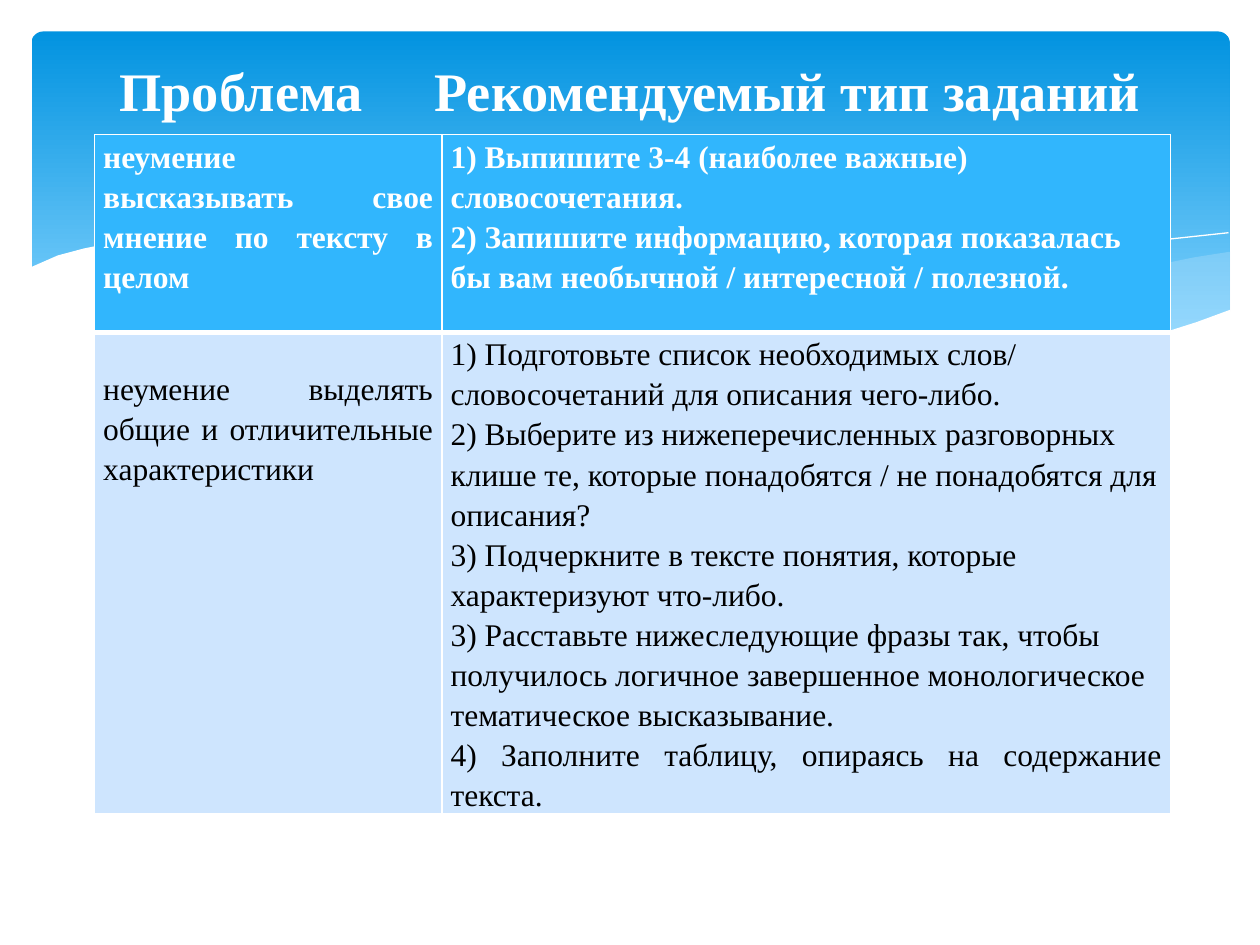
from dataclasses import dataclass
from typing import Optional

from lxml import etree
from pptx import Presentation
from pptx.dml import color as dml
from pptx.enum import shapes, text
from pptx.oxml import ns
from pptx.util import Pt

FONT = "Times New Roman"
WHITE = "FFFFFF"
GLOW = "C6E7FC"


@dataclass
class Wave:
    points: list[tuple[float, float]]
    fill: Optional[str] = None
    alpha: int = 100
    line: Optional[str] = None


@dataclass
class Cell:
    row: int
    col: int
    paragraphs: list[str]
    justified: tuple[int, ...] = ()
    top: float = 0


@dataclass
class RowStyle:
    height: float
    fill: str
    ink: str
    bold: bool
    top: float
    bottom: float


WAVES = [
    Wave([(702, 144), (682.6, 146.9), (663.1, 151.2), (641.5, 155.5), (619.9, 160.6),
          (579.6, 170.6), (542.2, 178.6), (508.3, 185), (475.9, 190.8), (507.6, 195.1),
          (536.4, 198), (578.2, 200.2), (614.9, 198.7), (645.8, 194.4), (673.2, 188.6),
          (693.4, 181.4), (702.7, 177.8), (702.7, 144)], GLOW, 29),
    Wave([(643, 196.6), (602.6, 190.8), (558, 182.9), (508.3, 172.8), (452.9, 159.8),
          (409.7, 149.8), (370.1, 142.6), (334.8, 137.5), (302.4, 134.6), (259.9, 133.2),
          (225.4, 135.4), (205.9, 137.5), (246.2, 143.3), (290.9, 151.9), (323.3, 159.8),
          (381.6, 172.8), (432.7, 183.6), (478.8, 191.5), (519.8, 197.3), (565.2, 200.2),
          (603.4, 200.2), (630.7, 198)], GLOW, 40),
    Wave([(222.5, 140.4), (247.7, 136.8), (288.7, 134.6), (337.7, 136.1), (383.8, 139.7),
          (437.8, 146.9), (500.4, 157.7), (572.4, 173.5), (653, 195.8)], line=WHITE),
    Wave([(441.4, 185), (500.4, 169.2), (558.7, 155.5), (623.5, 143.3), (665.3, 136.8),
          (702, 133.2)], line=WHITE),
    Wave([(703.4, 177.1), (684, 184.3), (662.4, 190.8), (638.6, 195.1), (612, 198),
          (582.5, 199.4), (547.9, 198), (509.8, 194.4), (466.6, 188.6), (416.9, 180),
          (362.2, 167.8), (321.8, 158.4), (262.8, 145.4), (210.2, 136.8), (165.6, 133.2),
          (127.4, 132.5), (95, 133.9), (68.4, 137.5), (48.2, 141.8), (33.1, 146.2),
          (16.6, 153.4), (16.6, 236.9), (703.4, 236.9)], WHITE),
]
COLUMNS = [198.5, 416.5]
ROWS = [RowStyle(113, "31B6FD", WHITE, True, 1, 3),
        RowStyle(274.5, "CEE5FE", "000000", False, 3, 1)]
CELLS = [
    Cell(0, 0, ["неумение высказывать свое мнение по тексту в целом"], (0,)),
    Cell(0, 1, ["1) Выпишите 3-4 (наиболее важные) словосочетания.",
                "2) Запишите информацию, которая показалась бы вам необычной / "
                "интересной / полезной."]),
    Cell(1, 0, ["неумение выделять общие и отличительные характеристики"], (0,), 20),
    Cell(1, 1, ["1) Подготовьте список необходимых слов/ словосочетаний для описания чего-либо.",
                "2) Выберите из нижеперечисленных разговорных клише те, которые "
                "понадобятся / не понадобятся для описания?",
                "3) Подчеркните в тексте понятия, которые характеризуют что-либо.",
                "3) Расставьте нижеследующие фразы так, чтобы получилось логичное "
                "завершенное монологическое тематическое высказывание.",
                "4) Заполните таблицу, опираясь на содержание текста."], (4,)),
]


def rgb(value: str) -> dml.RGBColor:
    """Turn a hex string into a colour."""
    return dml.RGBColor.from_string(value)


def style_runs(p, size: float, ink: str, bold: bool) -> None:
    """Format every run of a paragraph."""
    for r in p.runs:
        r.font.name, r.font.size, r.font.bold = FONT, Pt(size), bold
        r.font.color.rgb = rgb(ink)


def draw_banner(s) -> None:
    """Draw the rounded gradient banner."""
    sp = s.shapes.add_shape(shapes.MSO_SHAPE.ROUNDED_RECTANGLE,
                            Pt(18), Pt(18), Pt(684.7), Pt(194.4))
    sp.adjustments[0] = 0.034
    sp.shadow.inherit = False
    sp.line.fill.background()
    sp.fill.gradient()
    sp.fill.gradient_angle = 270
    for stop, position, ink in zip(sp.fill.gradient_stops, (0, 0.9), ("0293E0", "83D3FE")):
        stop.position = position
        stop.color.rgb = rgb(ink)


def draw_wave(s, wave: Wave) -> None:
    """Draw one wave as a filled area or an open line."""
    x, y = wave.points[0]
    builder = s.shapes.build_freeform(x, y, scale=Pt(1))
    builder.add_line_segments(wave.points[1:], close=wave.fill is not None)
    sp = builder.convert_to_shape()
    sp.shadow.inherit = False
    if wave.fill:
        sp.fill.solid()
        sp.fill.fore_color.rgb = rgb(wave.fill)
        ink = sp.fill._xPr.find(".//" + ns.qn("a:srgbClr"))
        if wave.alpha < 100:
            etree.SubElement(ink, ns.qn("a:alpha"), val=str(wave.alpha * 1000))
    else:
        sp.fill.background()
    if wave.line:
        sp.line.color.rgb = rgb(wave.line)
        sp.line.width = Pt(0)
    else:
        sp.line.fill.background()


def set_borders(cell, top: float, bottom: float) -> None:
    """Give a table cell white borders."""
    props = cell._tc.get_or_add_tcPr()
    for i, (side, width) in enumerate(zip("LRTB", (1, 1, top, bottom))):
        ln = etree.Element(ns.qn(f"a:ln{side}"), w=str(Pt(width)))
        fill = etree.SubElement(ln, ns.qn("a:solidFill"))
        etree.SubElement(fill, ns.qn("a:srgbClr"), val=WHITE)
        props.insert(i, ln)


def fill_cell(table, item: Cell) -> None:
    """Write and style one table cell."""
    style = ROWS[item.row]
    cell = table.cell(item.row, item.col)
    cell.margin_left = cell.margin_right = Pt(5)
    cell.margin_top, cell.margin_bottom = Pt(item.top), Pt(0)
    cell.fill.solid()
    cell.fill.fore_color.rgb = rgb(style.fill)
    set_borders(cell, style.top, style.bottom)
    tf = cell.text_frame
    tf.text = "\n".join(item.paragraphs)
    for i, p in enumerate(tf.paragraphs):
        p.line_spacing = 1.15
        p.alignment = text.PP_ALIGN.JUSTIFY if i in item.justified else text.PP_ALIGN.LEFT
        style_runs(p, 18, style.ink, style.bold)


def draw_table(s) -> None:
    """Draw the table of problems and tasks."""
    height = sum(row.height for row in ROWS)
    table = s.shapes.add_table(len(ROWS), len(COLUMNS), Pt(54), Pt(77),
                               Pt(sum(COLUMNS)), Pt(height)).table
    for column, width in zip(table.columns, COLUMNS):
        column.width = Pt(width)
    for row, style in zip(table.rows, ROWS):
        row.height = Pt(style.height)
    for item in CELLS:
        fill_cell(table, item)


def draw_title(s) -> None:
    """Draw the two column headings in the banner."""
    tf = s.shapes.add_textbox(Pt(36), Pt(26.6), Pt(648), Pt(50)).text_frame
    tf.word_wrap = True
    tf.vertical_anchor = text.MSO_ANCHOR.MIDDLE
    tf.text = "Проблема\t\tРекомендуемый тип заданий"
    p = tf.paragraphs[0]
    p.alignment = text.PP_ALIGN.CENTER
    style_runs(p, 31, WHITE, True)


def main() -> None:
    """Build the slide and save it."""
    prs = Presentation()
    prs.slide_width, prs.slide_height = Pt(720), Pt(540)
    s = prs.slides.add_slide(prs.slide_layouts[6])
    draw_banner(s)
    for wave in WAVES:
        draw_wave(s, wave)
    draw_table(s)
    draw_title(s)
    prs.save("out.pptx")


if __name__ == "__main__":
    main()
